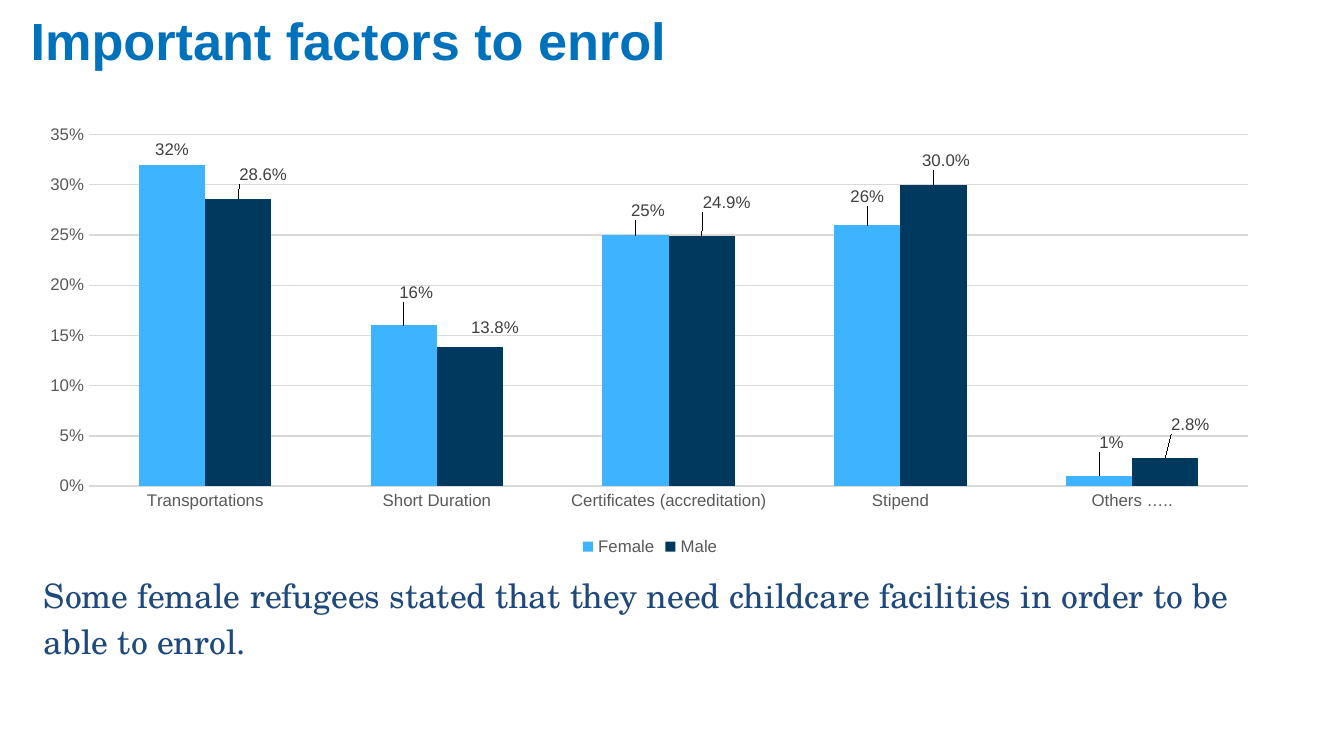
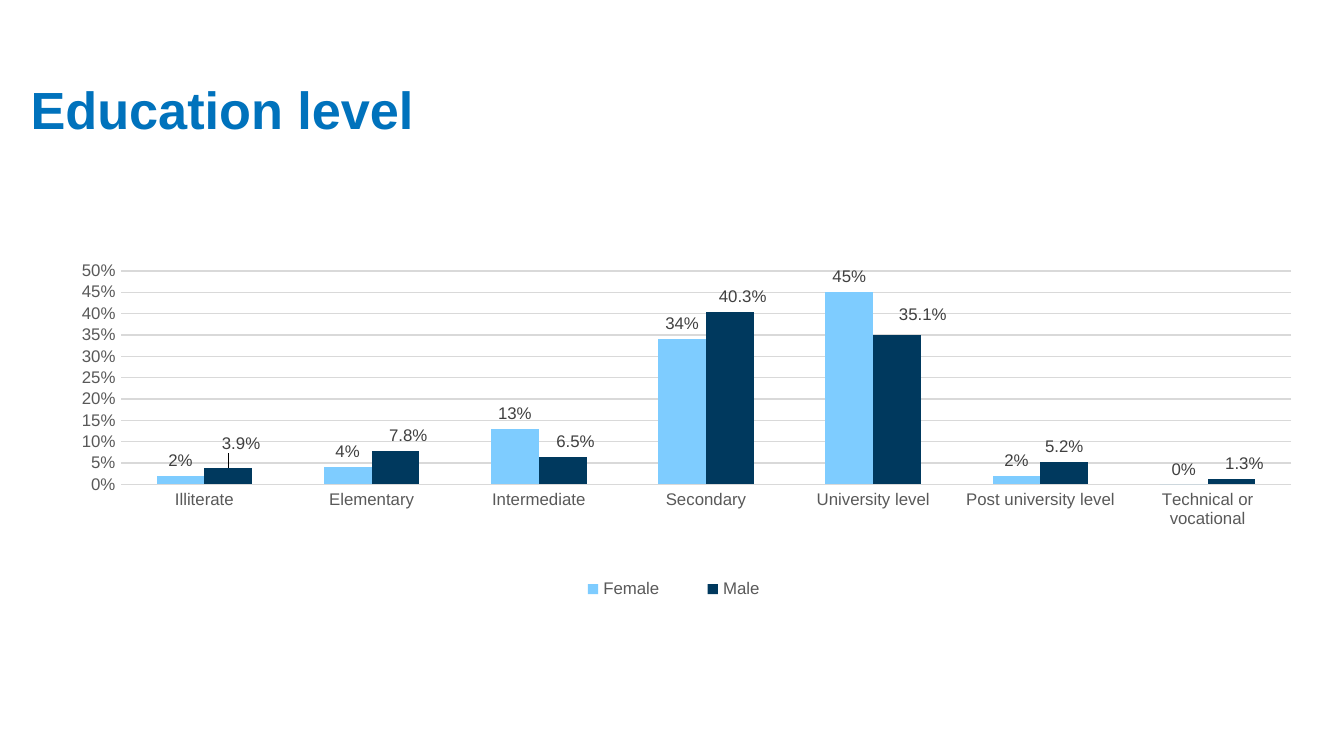
from lxml import etree
from pptx import Presentation, util as u
from pptx.chart.data import CategoryChartData
from pptx.dml.color import RGBColor
from pptx.enum import chart as ch, text
from pptx.oxml import ns

COLORS = {
    "title": "0072BC", "body": "1F497D", "label": "404040", "axis": "595959",
    "grid": "D9D9D9", "sky": "3EB3FF", "pale": "7ECCFF", "navy": "00395E",
}
LABEL_FORMATS = ("0%", "0.0%")


def add_layout(parent, index, edges, modes=()):
    """Give a chart part a manual layout, placed as child number index."""
    for old in parent.findall(ns.qn("c:layout")):
        parent.remove(old)
    layout = etree.Element(ns.qn("c:layout"))
    manual = etree.SubElement(layout, ns.qn("c:manualLayout"))
    for name, value in [*modes, *zip("xywh", edges)]:
        etree.SubElement(manual, ns.qn(f"c:{name}")).set("val", str(value))
    parent.insert(index, layout)


class Deck:
    EDGE = (("xMode", "edge"), ("yMode", "edge"))

    def __init__(self):
        self.prs = Presentation()
        self.prs.slide_width, self.prs.slide_height = u.Cm(25.4), u.Cm(14.29)
        self.s = None

    def style(self, font, size, color, name="Arial", bold=False):
        font.name, font.size, font.bold = name, u.Pt(size), bold
        font.color.rgb = RGBColor.from_string(COLORS[color])

    def slide(self, title, top, height, bottom_inset=0):
        self.s = self.prs.slides.add_slide(self.prs.slide_layouts[5])
        sp = self.s.shapes.title
        sp.left, sp.top = u.Cm(0.58), u.Cm(top)
        sp.width, sp.height = u.Cm(24.31), u.Cm(height)
        tf = sp.text_frame
        tf.text = title
        tf.auto_size = text.MSO_AUTO_SIZE.NONE
        tf.vertical_anchor = text.MSO_ANCHOR.BOTTOM
        tf.margin_left = tf.margin_right = tf.margin_top = 0
        tf.margin_bottom = u.Cm(bottom_inset)
        p = tf.paragraphs[0]
        p.alignment, p.line_spacing = text.PP_ALIGN.LEFT, 0.9
        self.style(p.font, 28, "title", bold=True)

    def note(self, words, *box):
        tf = self.s.shapes.add_textbox(*map(u.Cm, box)).text_frame
        tf.word_wrap = True
        p = tf.paragraphs[0]
        p.text, p.line_spacing, p.space_after = words, 1.15, u.Pt(10)
        self.style(p.font, 18, "body", name="TeX Gyre Schola")

    def columns(self, box, cats, series, top_value, plot_area, legend_area=None):
        """Add a column chart; series rows are name, color, values, label shifts."""
        data = CategoryChartData()
        data.categories = cats
        for name, _, values, _ in series:
            data.add_series(name, values)
        chart = self.s.shapes.add_chart(
            ch.XL_CHART_TYPE.COLUMN_CLUSTERED, *map(u.Cm, box), data).chart
        chart.has_title = False
        chart.font.name, chart.font.size = "Arial", u.Pt(10)
        add_layout(chart.plots[0]._element.getparent(), 0, plot_area,
                   (("layoutTarget", "inner"), *self.EDGE))
        self.axes(chart, top_value)
        self.legend(chart, legend_area)
        plot = chart.plots[0]
        plot.gap_width, plot.vary_by_categories = 150, False
        for ser, row, fmt in zip(plot.series, series, LABEL_FORMATS):
            ser.format.fill.solid()
            ser.format.fill.fore_color.rgb = RGBColor.from_string(COLORS[row[1]])
            self.labels(ser, fmt, row[3])

    def axes(self, chart, top_value):
        for axis in (chart.category_axis, chart.value_axis):
            axis.major_tick_mark = axis.minor_tick_mark = ch.XL_TICK_MARK.NONE
            axis.format.line.fill.background()
            self.style(axis.tick_labels.font, 9, "axis")
        axis = chart.value_axis
        axis.minimum_scale, axis.maximum_scale, axis.major_unit = 0, top_value, 0.05
        axis.tick_labels.number_format = "0%"
        axis.tick_labels.number_format_is_linked = False
        line = axis.major_gridlines.format.line
        line.width = u.Pt(0.75)
        line.color.rgb = RGBColor.from_string(COLORS["grid"])

    def legend(self, chart, area):
        chart.has_legend = True
        legend = chart.legend
        legend.position = ch.XL_LEGEND_POSITION.BOTTOM
        legend.include_in_layout = False
        self.style(legend.font, 9, "axis")
        if area:
            add_layout(legend._element, 1, area, self.EDGE)

    def labels(self, ser, fmt, shifts):
        """Label a series, moving some labels by fractions of the chart size."""
        labels = ser.data_labels
        labels.show_value = True
        labels.number_format, labels.number_format_is_linked = fmt, False
        labels.position = ch.XL_LABEL_POSITION.OUTSIDE_END
        self.style(labels.font, 9, "label")
        for i, shift in shifts.items():
            label = ser.points[i].data_label
            self.style(label.font, 9, "label")
            label.position = ch.XL_LABEL_POSITION.OUTSIDE_END
            node = ser._element.xpath(f'c:dLbls/c:dLbl[c:idx/@val="{i}"]')[0]
            add_layout(node, 1, shift)
            num_fmt = etree.Element(ns.qn("c:numFmt"), formatCode=fmt, sourceLinked="0")
            node.insert(2, num_fmt)


def main():
    deck = Deck()

    deck.slide("Important factors to enrol", 0.56, 1.96, bottom_inset=1.17)
    deck.columns(
        (0.51, 2.21, 23.55, 8.41),
        ["Transportations", "Short Duration", "Certificates (accreditation)",
         "Stipend", "Others ….."],
        [("Female", "sky", [0.32, 0.16, 0.25, 0.26, 0.01],
          {1: (0.01, -0.04), 2: (0.01, -0.02), 3: (0, -0.03), 4: (0.01, -0.04)}),
         ("Male", "navy", [0.286, 0.138, 0.249, 0.3, 0.028],
          {0: (0.02, -0.02), 1: (0.02, -0.01), 2: (0.02, -0.04),
           3: (0.01, -0.02), 4: (0.02, -0.04)})],
        0.35, (0.05, 0.04, 0.93, 0.79))
    deck.note("Some female refugees stated that they need childcare facilities "
              "in order to be able to enrol.", 0.58, 10.62, 23.72, 1.96)

    deck.slide("Education level", 0.94, 1.73)
    deck.columns(
        (0.58, 3.61, 24.31, 8.41),
        ["Illiterate", "Elementary", "Intermediate", "Secondary", "University level",
         "Post university level", "Technical or vocational"],
        [("Female", "pale", [0.02, 0.04, 0.13, 0.34, 0.45, 0.02, 0], {}),
         ("Male", "navy", [0.039, 0.078, 0.065, 0.403, 0.351, 0.052, 0.013],
          {0: (0.01, -0.02), 1: (0.01, 0), 2: (0.01, 0), 3: (0.01, 0),
           4: (0.02, -0.01), 6: (0.01, 0)})],
        0.5, (0.07, 0.18, 0.91, 0.48), legend_area=(0.4, 0.86, 0.2, 0.07))

    deck.prs.save("out.pptx")


if __name__ == "__main__":
    main()
